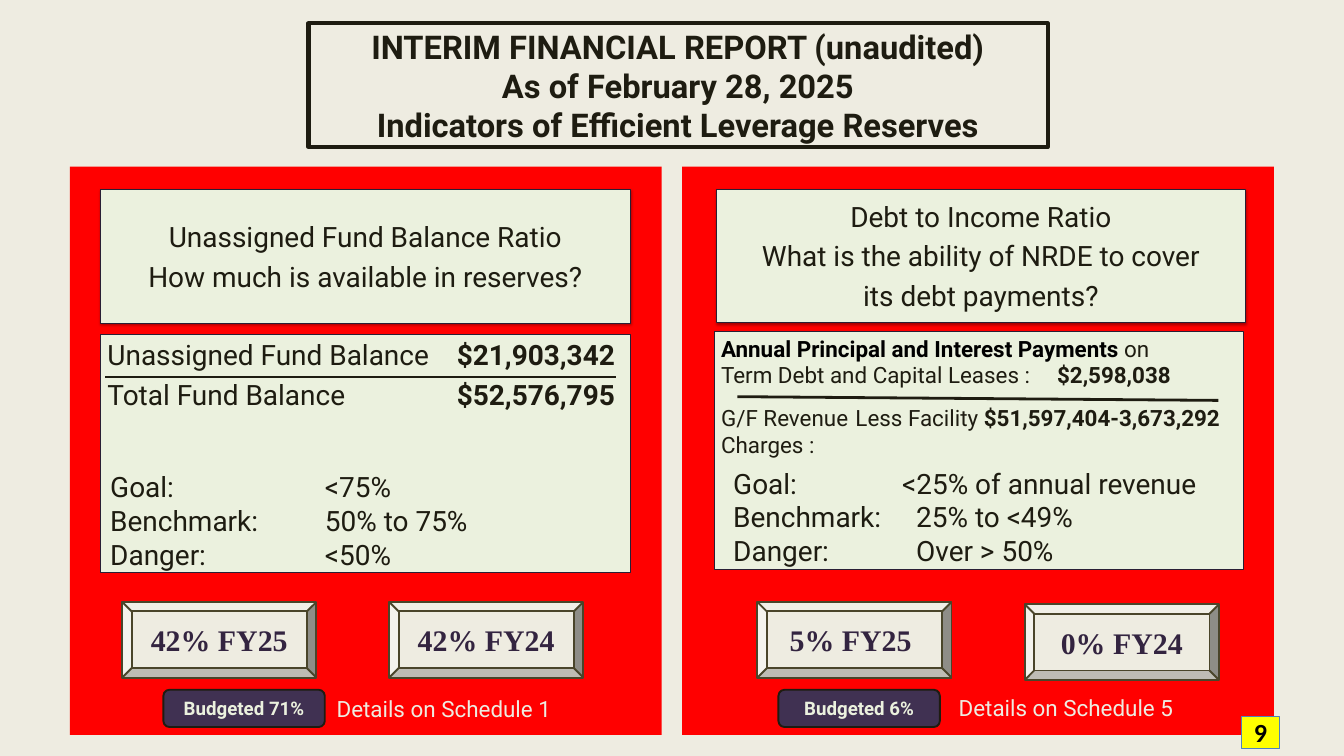
from dataclasses import dataclass

import pptx
import pptx.dml.color
import pptx.enum.shapes
import pptx.enum.text
import pptx.oxml
import pptx.oxml.ns
import pptx.util
from lxml import etree

Pt = pptx.util.Pt
RGB = pptx.dml.color.RGBColor.from_string
SHAPE = pptx.enum.shapes.MSO_SHAPE
ALIGN = pptx.enum.text.PP_ALIGN
ANCHOR = pptx.enum.text.MSO_ANCHOR
qn = pptx.oxml.ns.qn


@dataclass(frozen=True)
class Theme:
    paper: str = "EEECE1"
    panel: str = "FF0000"
    card: str = "EBF1DE"
    card_edge: str = "291F35"
    ink: str = "1E1C11"
    black: str = "000000"
    bevel_edge: str = "4A452A"
    bevel_text: str = "332440"
    budget: str = "403152"
    badge: str = "FFFF00"
    badge_edge: str = "4F81BD"
    font: str = "Roboto"
    serif: str = "Times New Roman"
    number_font: str = "Calibri"
    title: float = 35
    body: float = 30
    small: float = 24
    ratio: float = 32
    label: float = 20
    number: float = 28


T = Theme()


def add_box(slide, kind, box, fill, line=None, width=0.75):
    sp = slide.shapes.add_shape(kind, *map(Pt, box))
    sp.shadow.inherit = False
    sp.fill.solid()
    sp.fill.fore_color.rgb = RGB(fill)
    if line:
        sp.line.color.rgb = RGB(line)
        sp.line.width = Pt(width)
    else:
        sp.line.fill.background()
    return sp


def add_soft_shadow(sp):
    effects = sp._element.spPr.find(qn("a:effectLst"))
    shadow = etree.SubElement(effects, qn("a:outerShdw"), blurRad=str(Pt(3.1)),
                              dist=str(Pt(1.8)), dir="5400000", rotWithShape="0")
    color = etree.SubElement(shadow, qn("a:srgbClr"), val=T.black)
    etree.SubElement(color, qn("a:alpha"), val="35000")


def add_tabs(p, tabs):
    """Give a paragraph (position, alignment) tab stops; alignment is l or r."""
    tab_list = etree.SubElement(p._p.get_or_add_pPr(), qn("a:tabLst"))
    for pos, align in tabs:
        etree.SubElement(tab_list, qn("a:tab"), pos=str(Pt(pos)), algn=align)


def write(sp, paragraphs, size, color=T.ink, font=T.font, align=ALIGN.LEFT,
          anchor=ANCHOR.TOP, bold=False, gap=0, inset=None):
    """Fill a shape; a paragraph is a list of (text, format overrides) runs."""
    tf = sp.text_frame
    frame = dict(word_wrap=True, vertical_anchor=anchor,
                 auto_size=pptx.enum.text.MSO_AUTO_SIZE.NONE)
    if inset is not None:
        frame.update({f"margin_{side}": Pt(inset)
                      for side in ("left", "top", "right", "bottom")})
    for name, value in frame.items():
        setattr(tf, name, value)
    for i, runs in enumerate(paragraphs):
        p = tf.paragraphs[0] if i == 0 else tf.add_paragraph()
        p.alignment = align
        p.space_before = Pt(gap)
        for text, changes in runs:
            r = p.add_run()
            r.text = text
            style = dict(name=font, size=Pt(size), bold=bold) | changes
            rgb = style.pop("color", color)
            for name, value in style.items():
                setattr(r.font, name, value)
            r.font.color.rgb = RGB(rgb)
    return tf.paragraphs


def add_rule(slide, x1, y1, x2, y2):
    line = slide.shapes.add_connector(
        pptx.enum.shapes.MSO_CONNECTOR.STRAIGHT, *map(Pt, (x1, y1, x2, y2)))
    line.line.color.rgb = RGB(T.ink)
    line.line.width = Pt(3)
    etree.SubElement(line._element.spPr, qn("a:effectLst"))


def add_title(slide, box, lines):
    sp = slide.shapes.title
    for name, value in zip(("left", "top", "width", "height"), box):
        setattr(sp, name, Pt(value))
    sp.line.color.rgb = RGB(T.ink)
    sp.line.width = Pt(4.5)
    write(sp, [[(text, {})] for text in lines], T.title, align=ALIGN.CENTER,
          anchor=ANCHOR.MIDDLE, bold=True, inset=0)


def add_panel(slide, box, d):
    """Red panel with question, figures, goals, ratios and budget note."""
    x, y, w, h = box

    def place(offset, width, height):
        return x + offset[0], y + offset[1], width, height

    centred = dict(align=ALIGN.CENTER, anchor=ANCHOR.MIDDLE)
    add_box(slide, SHAPE.RECTANGLE, box, T.panel)

    sp = add_box(slide, SHAPE.RECTANGLE, place(d["question_at"], 567, 143),
                 T.card, T.card_edge)
    add_soft_shadow(sp)
    write(sp, [[(text, {})] for text in d["question"]], T.body, gap=6, **centred)

    sp = add_box(slide, SHAPE.RECTANGLE, place(d["figures_at"], 567, 255),
                 T.card, T.card_edge)
    paragraphs = write(sp, d["figures"], d["figures_size"])
    for p, gap, tabs in zip(paragraphs, d["figure_gaps"], d["figure_tabs"]):
        p.space_before = Pt(gap)
        add_tabs(p, tabs)

    for at, text in d["ratios"]:
        sp = add_box(slide, SHAPE.BEVEL, place(at, 208, 81), T.paper, T.bevel_edge, 2)
        write(sp, [[(text, {})]], T.ratio, T.bevel_text, T.serif, bold=True, **centred)

    sp = add_box(slide, SHAPE.ROUNDED_RECTANGLE, place(d["budget_at"], 173, 40),
                 T.budget, T.ink, 2)
    write(sp, [[(d["budget"], {})]], T.label, T.card, bold=True, **centred)

    sp = slide.shapes.add_textbox(*map(Pt, place(d["details_at"], 276, 36)))
    write(sp, [[(d["details"], {})]], T.small, T.paper)

    x1, y1, x2, y2 = d["rule"]
    add_rule(slide, x + x1, y + y1, x + x2, y + y2)

    sp = slide.shapes.add_textbox(*map(Pt, place(d["goals_at"], 550, 117)))
    rows = zip(("Goal:", "Benchmark:", "Danger:"), d["goals"])
    paragraphs = write(sp, [[(f"{name}\t{goal}", {})] for name, goal in rows], T.body)
    for p, tab in zip(paragraphs, d["goal_tabs"]):
        add_tabs(p, [(tab, "l")])


def add_page_number(slide, box, text):
    sp = add_box(slide, SHAPE.RECTANGLE, box, T.badge, T.badge_edge)
    write(sp, [[(text, {})]], T.number, T.black, T.number_font,
          align=ALIGN.CENTER, bold=True, inset=0)


BOLD = {"bold": True}

FUND_BALANCE = dict(
    question_at=(33, 24.5),
    question=["Unassigned Fund Balance Ratio", "How much is available in reserves?"],
    figures_at=(33, 180), figures_size=T.body,
    figures=[[("Unassigned Fund Balance\t", {}), ("$21,903,342", BOLD)],
             [("Total Fund Balance\t", {}), ("$52,576,795", BOLD)]],
    figure_gaps=(6, 6), figure_tabs=[[(544, "r")]] * 2,
    rule=(38, 225.5, 584.5, 225.5),
    goals_at=(36, 321.5), goals=["<75%", "50% to 75%", "<50%"], goal_tabs=[230] * 3,
    ratios=[((56, 466.5), "42% FY25"), ((342, 466.5), "42% FY24")],
    budget_at=(100, 560.5), budget="Budgeted 71%",
    details_at=(278.5, 563), details="Details on Schedule 1")

DEBT_TO_INCOME = dict(
    question_at=(36.5, 24),
    question=["Debt to Income Ratio", "What is the ability of NRDE to cover",
              "its debt payments?"],
    figures_at=(34.5, 176.5), figures_size=T.small,
    figures=[[("Annual Principal and Interest Payments ", BOLD | {"color": T.black}),
              ("on", {})],
             [("Term Debt and Capital Leases :\t", {}), ("$2,598,038", BOLD)],
             [("G/F Revenue\tLess Facility ", {}), ("$51,597,404-3,673,292", BOLD)],
             [("Charges :", {})]],
    figure_gaps=(0, 0, 16.5, 0),
    figure_tabs=[[], [(360, "l")], [(144, "l")], []],
    rule=(59, 246.5, 574.5, 250.5),
    goals_at=(47.5, 317.5), goal_tabs=[181, 196, 196],
    goals=["<25% of annual revenue", "25% to <49%", "Over > 50%"],
    ratios=[((80.5, 466.5), "5% FY25 "), ((367, 469), "0% FY24")],
    budget_at=(103, 560.5), budget="Budgeted 6%",
    details_at=(289, 561.5), details="Details on Schedule 5")


def main():
    prs = pptx.Presentation()
    prs.slide_width, prs.slide_height = Pt(1440), Pt(810)
    slide = prs.slides.add_slide(prs.slide_layouts[5])
    slide.background.fill.solid()
    slide.background.fill.fore_color.rgb = RGB(T.paper)
    add_title(slide, (330.5, 25, 792, 132.5),
              ["INTERIM FINANCIAL REPORT (unaudited)", "As of February 28, 2025",
               "Indicators of Efficient Leverage Reserves"])
    for left, content in ((75, FUND_BALANCE), (731, DEBT_TO_INCOME)):
        add_panel(slide, (left, 178.5, 634, 609), content)
    add_page_number(slide, (1330.5, 768, 40, 34), "9")
    prs.save("out.pptx")


if __name__ == "__main__":
    main()
